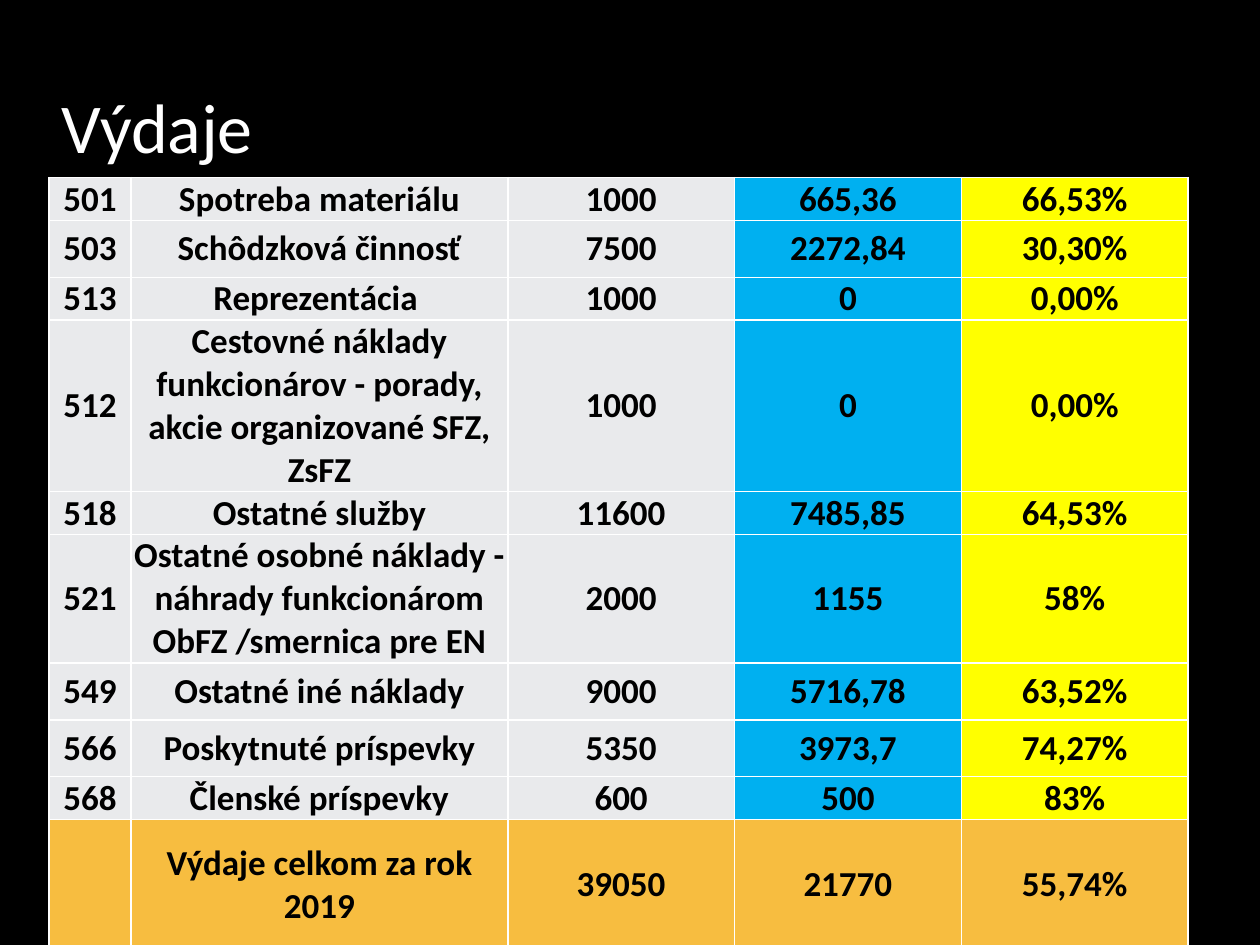
import pptx
import pptx.util
import pptx.oxml
import pptx.dml.color
import pptx.enum.text
from pptx.util import Inches, Pt

COLORS = {
    "background": "000000",
    "title": "FFFFFF",
    "text": "000000",
    "border": "FFFFFF",
    "plain": "E9EAEC",
    "spent": "00B0F0",
    "share": "FFFF00",
    "total": "F7BD40",
}
FONT = "Calibri"
TITLE = "Výdaje"

# row height, then account, item, budget, spent, share
EXPENSES = [
    (0.33, "501", "Spotreba materiálu", "1000", "665,36", "66,53%"),
    (0.45, "503", "Schôdzková činnosť", "7500", "2272,84", "30,30%"),
    (0.33, "513", "Reprezentácia ", "1000", "0", "0,00%"),
    (1.3, "512", "Cestovné náklady funkcionárov - porady, akcie organizované SFZ, ZsFZ",
     "1000", "0", "0,00%"),
    (0.33, "518", "Ostatné služby", "11600", "7485,85", "64,53%"),
    (0.98, "521", "Ostatné osobné náklady - náhrady funkcionárom ObFZ /smernica pre EN",
     "2000", "1155", "58%"),
    (0.45, "549", "Ostatné iné náklady", "9000", "5716,78", "63,52%"),
    (0.45, "566", "Poskytnuté príspevky", "5350", "3973,7", "74,27%"),
    (0.33, "568", "Členské príspevky", "600", "500", "83%"),
    (1.04, "", "Výdaje celkom za rok 2019", "39050", "21770", "55,74%"),
]
COLUMN_WIDTHS = [0.65, 2.99, 1.8, 1.8, 1.8]
COLUMN_FILLS = ["plain", "plain", "plain", "spent", "share"]
LEFT, TABLE_TOP = 0.39, 1.41


def rgb(name):
    return pptx.dml.color.RGBColor.from_string(COLORS[name])


def format_run(r, size, color, bold=False):
    r.font.name = FONT
    r.font.size = Pt(size)
    r.font.bold = bold
    r.font.color.rgb = rgb(color)


def add_borders(cell):
    tc_pr = cell._tc.get_or_add_tcPr()
    for i, side in enumerate(("lnL", "lnR", "lnT", "lnB")):
        # Border lines must come before the fill in the cell properties.
        tc_pr.insert(i, pptx.oxml.parse_xml(
            f'<a:{side} xmlns:a="http://schemas.openxmlformats.org/drawingml/2006/main"'
            f' w="{Pt(1)}"><a:solidFill><a:srgbClr val="{COLORS["border"]}"/>'
            f'</a:solidFill></a:{side}>'))


def fill_cell(cell, text, fill):
    cell.fill.solid()
    cell.fill.fore_color.rgb = rgb(fill)
    add_borders(cell)
    cell.margin_left = cell.margin_right = cell.margin_top = cell.margin_bottom = 0
    cell.vertical_anchor = pptx.enum.text.MSO_ANCHOR.MIDDLE
    cell.text_frame.text = text
    p = cell.text_frame.paragraphs[0]
    p.alignment = pptx.enum.text.PP_ALIGN.CENTER
    for r in p.runs:
        format_run(r, 20, "text", bold=True)


def add_title(s):
    sp = s.shapes.title
    sp.left, sp.top, sp.width, sp.height = map(Inches, (LEFT, 0.21, 8.4, 1.17))
    tf = sp.text_frame
    tf.text = TITLE
    tf.word_wrap = True
    tf.auto_size = pptx.enum.text.MSO_AUTO_SIZE.NONE
    tf.vertical_anchor = pptx.enum.text.MSO_ANCHOR.BOTTOM
    p = tf.paragraphs[0]
    p.alignment = pptx.enum.text.PP_ALIGN.LEFT
    p.space_before = Pt(4)
    format_run(p.runs[0], 40, "title")


def add_expense_table(s):
    height = sum(row[0] for row in EXPENSES)
    table = s.shapes.add_table(
        len(EXPENSES), len(COLUMN_WIDTHS), Inches(LEFT), Inches(TABLE_TOP),
        Inches(sum(COLUMN_WIDTHS)), Inches(height)).table
    table.first_row = table.horz_banding = False
    for column, width in zip(table.columns, COLUMN_WIDTHS):
        column.width = Inches(width)
    for i, (row_height, *texts) in enumerate(EXPENSES):
        table.rows[i].height = Inches(row_height)
        is_total = i == len(EXPENSES) - 1
        for j, text in enumerate(texts):
            fill_cell(table.cell(i, j), text, "total" if is_total else COLUMN_FILLS[j])


def main():
    prs = pptx.Presentation()
    prs.slide_width, prs.slide_height = Inches(10), Inches(7.5)
    s = prs.slides.add_slide(prs.slide_layouts[5])
    s.background.fill.solid()
    s.background.fill.fore_color.rgb = rgb("background")
    add_title(s)
    add_expense_table(s)
    prs.save("out.pptx")


if __name__ == "__main__":
    main()
